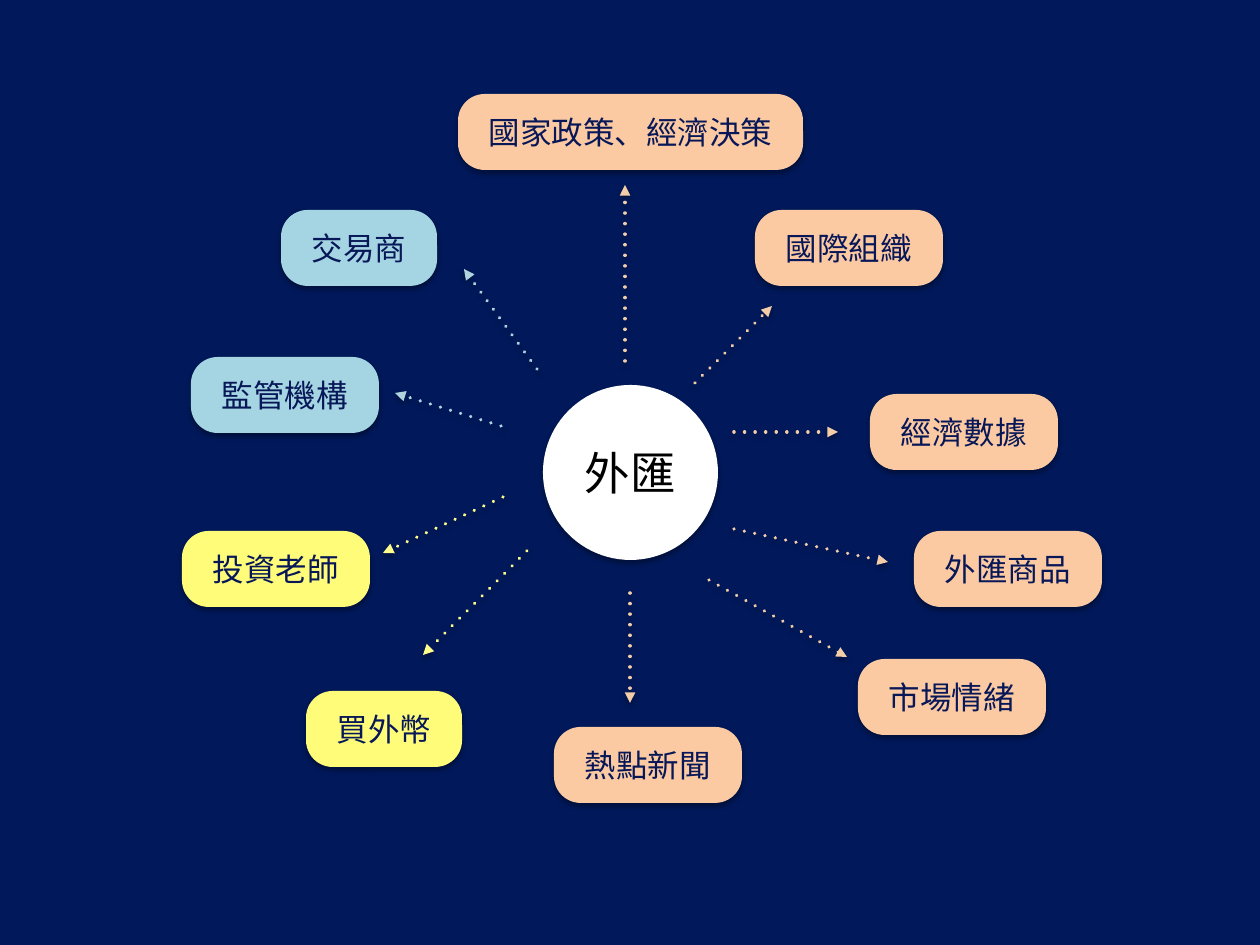
from lxml.etree import SubElement
from pptx import Presentation
from pptx.dml.color import RGBColor
from pptx.enum.shapes import MSO_CONNECTOR, MSO_SHAPE
from pptx.enum.text import MSO_ANCHOR, PP_ALIGN
from pptx.oxml import parse_xml
from pptx.oxml.ns import nsdecls, qn
from pptx.util import Emu, Pt

THEME = {
    "font": "Noto Sans CJK TC",
    "background": "01195B",
    "hub_fill": "FFFFFF",
    "hub_text": "000000",
    "node_text": "071757",
    "market": ("FBCAA2", "F3CCA8"),
    "investor": ("FFFC79", "FEFC8B"),
    "broker": ("A5D5E2", "AFD4E0"),
    "hub_size": 26,
    "node_size": 18,
    "line_width": 2,
}
SCALE = 914400 / 126
NODE_HEIGHT = 76
NODE_PADDING = 62
CHARACTER_WIDTH = 31.5

SHADOW = (
    f'<a:effectLst {nsdecls("a")}><a:outerShdw blurRad="38100" dist="22860" dir="5400000" rotWithShape="0">'
    '<a:srgbClr val="000000"><a:alpha val="35000"/></a:srgbClr></a:outerShdw></a:effectLst>'
)
DOTS = f'<a:custDash {nsdecls("a")}><a:ds d="100000" sp="200000"/></a:custDash>'
ARROWHEAD = f'<a:tailEnd {nsdecls("a")} type="triangle"/>'

FAMILIES = {
    "market": [
        ("國家政策、經濟決策", 458, 94, (625, 361), (625, 185)),
        ("國際組織", 755, 210, (695, 383), (772, 306)),
        ("經濟數據", 870, 394, (734, 432), (838, 432)),
        ("外匯商品", 914, 531, (734, 529), (888, 562)),
        ("市場情緒", 858, 659, (709, 580), (847, 657)),
        ("熱點新聞", 554, 727, (630, 593), (630, 703)),
    ],
    "investor": [
        ("投資老師", 182, 531, (503, 497), (383, 553)),
        ("買外幣", 306, 691, (527, 551), (423, 655)),
    ],
    "broker": [
        ("交易商", 281, 210, (537, 369), (464, 269)),
        ("監管機構", 191, 357, (501, 426), (395, 393)),
    ],
}


def px(*lengths):
    return [Emu(round(length * SCALE)) for length in lengths]


def add_label(shapes, preset, box, text, fill, color, size):
    shape = shapes.add_shape(preset, *px(*box))
    shape.fill.solid()
    shape.fill.fore_color.rgb = RGBColor.from_string(fill)
    shape.line.fill.background()
    shape._element.spPr.append(parse_xml(SHADOW))
    text_frame = shape.text_frame
    text_frame.text = text
    text_frame.word_wrap = False
    text_frame.vertical_anchor = MSO_ANCHOR.MIDDLE
    paragraph = text_frame.paragraphs[0]
    paragraph.alignment = PP_ALIGN.CENTER
    font = paragraph.runs[0].font
    font.name = THEME["font"]
    font.size = Pt(size)
    font.color.rgb = RGBColor.from_string(color)
    SubElement(font._element, qn("a:ea"), typeface=THEME["font"])
    return shape


presentation = Presentation()
presentation.slide_width, presentation.slide_height = px(1260, 945)
slide = presentation.slides.add_slide(presentation.slide_layouts[6])
slide.background.fill.solid()
slide.background.fill.fore_color.rgb = RGBColor.from_string(THEME["background"])

add_label(slide.shapes, MSO_SHAPE.OVAL, (543, 385, 175, 175), "外匯",
          THEME["hub_fill"], THEME["hub_text"], THEME["hub_size"])

for family, nodes in FAMILIES.items():
    fill, line_color = THEME[family]
    group = slide.shapes.add_group_shape()
    for text, left, top, start, end in nodes:
        width = int(NODE_PADDING + CHARACTER_WIDTH * len(text))
        node = add_label(group.shapes, MSO_SHAPE.ROUNDED_RECTANGLE, (left, top, width, NODE_HEIGHT),
                         text, fill, THEME["node_text"], THEME["node_size"])
        node.adjustments[0] = 0.35
    for text, left, top, start, end in nodes:
        arrow = group.shapes.add_connector(MSO_CONNECTOR.STRAIGHT, *px(*start, *end))
        arrow.line.color.rgb = RGBColor.from_string(line_color)
        arrow.line.width = Pt(THEME["line_width"])
        outline = arrow.line._get_or_add_ln()
        outline.set("cap", "rnd")
        outline.append(parse_xml(DOTS))
        outline.append(parse_xml(ARROWHEAD))
        arrow._element.spPr.append(parse_xml(SHADOW))

presentation.save("out.pptx")
